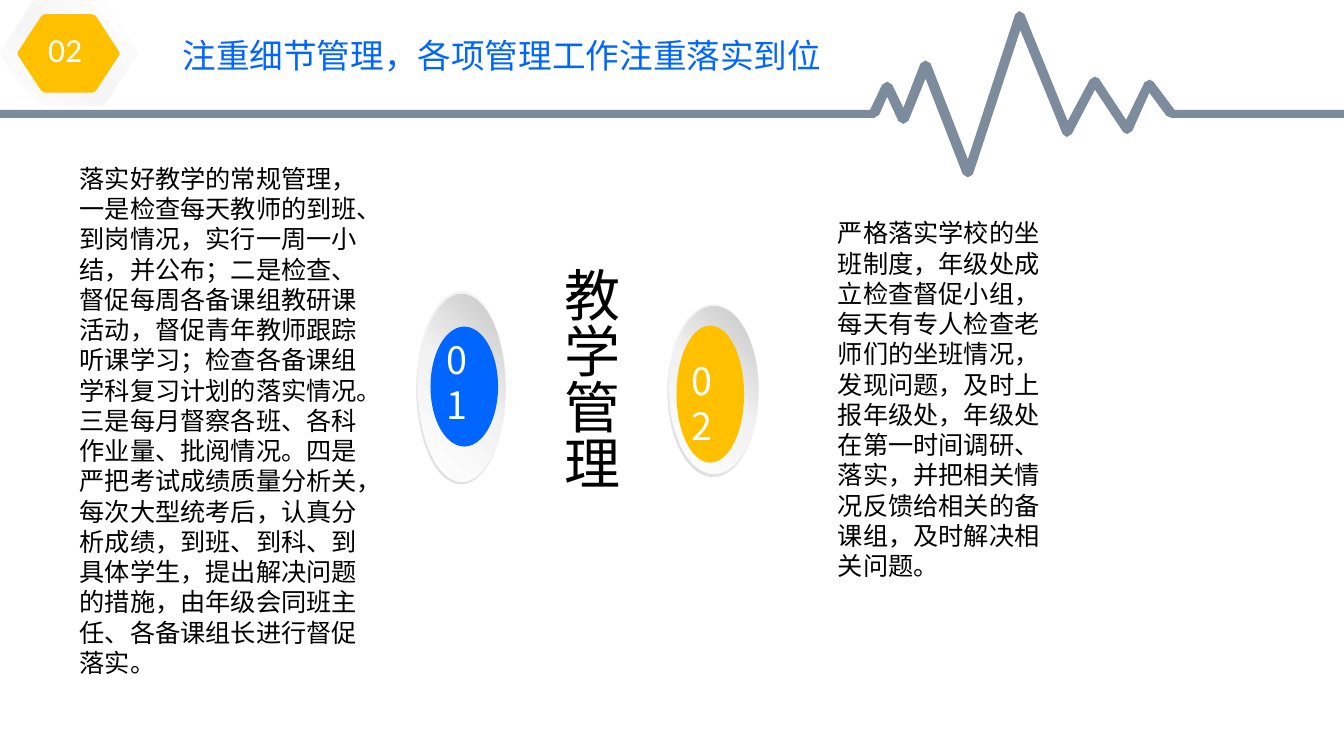
from dataclasses import dataclass

from lxml import etree
from pptx import Presentation
from pptx.dml.color import RGBColor
from pptx.enum import shapes, text
from pptx.oxml.ns import qn
from pptx.util import Inches, Pt


@dataclass(frozen=True)
class Theme:
    blue: str = "0066FF"
    amber: str = "FFC000"
    slate: str = "7C8C9C"
    white: str = "FFFFFF"
    black: str = "000000"
    cjk: str = "Noto Sans CJK SC"
    latin: str = "Calibri"
    body: float = 18
    heading: float = 24
    number: float = 26.9
    centre: float = 40
    rim: tuple = ((0, "F2F2F2"), (55, "F2F2F2"), (100, "D9D9D9"))
    dome: tuple = ((0, "FFFFFF"), (51, "F2F2F2"), (100, "C5C5C5"))
    badge: tuple = ((0, "FFFFFF"), (47, "F5F5F5"), (100, "FFFFFF"))


THEME = Theme()
TITLE = "注重细节管理，各项管理工作注重落实到位"
SECTION = "02"
CENTRE = "教学管理"

# Text and its box: left, top, width, height
BODIES = [
    ("严格落实学校的坐班制度，年级处成立检查督促小组，每天有专人检查老师们的坐班情况，"
     "发现问题，及时上报年级处，年级处在第一时间调研、落实，并把相关情况反馈给相关的备课组，"
     "及时解决相关问题。", (8.22, 2.12, 2.36, 3.72)),
    ("落实好教学的常规管理，一是检查每天教师的到班、到岗情况，实行一周一小结，并公布；"
     "二是检查、督促每周各备课组教研课活动，督促青年教师跟踪听课学习；"
     "检查各备课组学科复习计划的落实情况。三是每月督察各班、各科作业量、批阅情况。"
     "四是严把考试成绩质量分析关，每次大型统考后，认真分析成绩，到班、到科、到具体学生，"
     "提出解决问题的措施，由年级会同班主任、各备课组长进行督促落实。", (0.7, 1.58, 3.05, 5.24)),
]

# Number, colour, then boxes of the rim, dome, coloured centre and label
BUTTONS = [
    ("01", THEME.blue, (4.13, 2.89, 0.89, 1.91), (4.15, 2.92, 0.86, 1.86),
     (4.27, 3.24, 0.67, 1.19), (4.3, 3.27, 0.67, 1.04)),
    ("02", THEME.amber, (6.62, 3.02, 0.91, 1.71), (6.64, 3.04, 0.88, 1.66),
     (6.71, 3.23, 0.67, 1.36), (6.73, 3.48, 0.67, 1.04)),
]

PULSE_TOP = [
    (-0.1, 1.09), (8.63, 1.09), (8.75, 0.84), (8.8, 0.81), (8.85, 0.84), (8.96, 1.07),
    (9.13, 0.63), (9.18, 0.6), (9.23, 0.63), (9.6, 1.58), (10.07, 0.14), (10.11, 0.11),
    (10.16, 0.14), (10.59, 1.2), (10.81, 0.79), (10.86, 0.76), (10.9, 0.78), (11.17, 1.19),
    (11.35, 0.82), (11.4, 0.79), (11.44, 0.81), (11.65, 1.09), (13.43, 1.09)]
PULSE_BOTTOM = [
    (13.43, 1.17), (11.62, 1.17), (11.57, 1.15), (11.4, 0.92), (11.23, 1.3), (11.18, 1.33),
    (11.14, 1.31), (10.86, 0.89), (10.63, 1.33), (10.58, 1.36), (10.54, 1.33), (10.12, 0.3),
    (9.65, 1.73), (9.6, 1.76), (9.55, 1.73), (9.18, 0.78), (9.01, 1.2), (8.96, 1.23),
    (8.91, 1.2), (8.8, 0.96), (8.72, 1.14), (8.67, 1.17), (-0.1, 1.17)]

HEXAGON_CENTRE = (0.68, 0.53)
HEXAGONS = [((1.37, 1.06), THEME.white), ((1.35, 1.04), THEME.badge), ((1.01, 0.78), THEME.amber)]
# One quarter of a hexagon with softened corners, as shares of its half size
HEXAGON_QUARTER = [(1, 0), (0.99, 0.05), (0.54, 0.94), (0.5, 0.98), (0.45, 1)]


def paint(shape, fill, angle=0):
    """Fill with one colour or with (percent, colour) stops, without outline or shadow."""
    shape.shadow.inherit = False
    shape.line.fill.background()
    if isinstance(fill, str):
        shape.fill.solid()
        shape.fill.fore_color.rgb = RGBColor.from_string(fill)
        return
    shape.fill.gradient()
    shape.fill.gradient_angle = 360 - angle
    stops = shape._element.spPr.find(qn("a:gradFill")).find(qn("a:gsLst"))
    for stop in list(stops):
        stops.remove(stop)
    for percent, color in fill:
        stop = etree.SubElement(stops, qn("a:gs"), pos=str(percent * 1000))
        etree.SubElement(stop, qn("a:srgbClr"), val=color)


def add_preset(slide, kind, box, fill, angle=0):
    shape = slide.shapes.add_shape(kind, *map(Inches, box))
    paint(shape, fill, angle)
    return shape


def add_outline(slide, points, fill, angle=0):
    units = [(round(x * 1000), round(y * 1000)) for x, y in points]
    builder = slide.shapes.build_freeform(*units[0], scale=Inches(1) / 1000)
    builder.add_line_segments(units[1:], close=True)
    paint(builder.convert_to_shape(), fill, angle)


def add_hexagon(slide, size, fill):
    quarter = HEXAGON_QUARTER
    ring = (quarter
            + [(-x, y) for x, y in reversed(quarter)]
            + [(-x, -y) for x, y in quarter[1:]]
            + [(x, -y) for x, y in reversed(quarter[1:])])
    (center_x, center_y), (width, height) = HEXAGON_CENTRE, size
    points = [(center_x + x * width / 2, center_y + y * height / 2) for x, y in ring]
    add_outline(slide, points, fill, 315)


def write(shape, words, size, color, font=THEME.cjk, insets=(0.1, 0.05)):
    frame = shape.text_frame
    frame.word_wrap = True
    frame.auto_size = text.MSO_AUTO_SIZE.NONE
    frame.vertical_anchor = text.MSO_ANCHOR.TOP
    frame.margin_left = frame.margin_right = Inches(insets[0])
    frame.margin_top = frame.margin_bottom = Inches(insets[1])
    paragraph = frame.paragraphs[0]
    paragraph.alignment = text.PP_ALIGN.LEFT
    paragraph.line_spacing = Pt(round(size * 1.2, 1))
    run = paragraph.add_run()
    run.text = words
    run.font.size = Pt(size)
    run.font.name = font
    run.font.color.rgb = RGBColor.from_string(color)
    etree.SubElement(run.font._element, qn("a:ea"), typeface=font)
    return paragraph


def add_text(slide, box, *args, **options):
    shape = slide.shapes.add_textbox(*map(Inches, box))
    write(shape, *args, **options)
    return shape


def add_title(slide):
    title = slide.shapes.title
    title.left, title.top, title.width, title.height = map(Inches, (1.31, 0.3, 7.06, 0.5))
    paragraph = write(title, TITLE, THEME.heading, THEME.blue)
    paragraph._p.get_or_add_pPr().set("indent", str(Inches(0.4)))


def add_button(slide, number, color, rim, dome, center, label):
    ring = add_preset(slide, shapes.MSO_SHAPE.DONUT, rim, THEME.rim, 135)
    ring.adjustments[0] = 0.05
    add_preset(slide, shapes.MSO_SHAPE.OVAL, dome, THEME.dome, 315)
    add_preset(slide, shapes.MSO_SHAPE.OVAL, center, color)
    add_text(slide, label, number, THEME.number, THEME.white, insets=(0.13, 0.07))


def main():
    presentation = Presentation()
    presentation.slide_width, presentation.slide_height = Inches(13.33), Inches(7.5)
    slide = presentation.slides.add_slide(presentation.slide_layouts[5])
    add_title(slide)
    add_outline(slide, PULSE_TOP + PULSE_BOTTOM, THEME.slate)
    for button in BUTTONS:
        add_button(slide, *button)
    for words, box in BODIES:
        add_text(slide, box, words, THEME.body, THEME.black, insets=(0.09, 0.04))
    centre = add_text(slide, (5.36, 2.55, 0.88, 3.57), CENTRE, THEME.centre, THEME.black)
    centre.text_frame._txBody.bodyPr.set("vert", "eaVert")
    for size, fill in HEXAGONS:
        add_hexagon(slide, size, fill)
    add_text(slide, (0.38, 0.24, 0.72, 0.5), SECTION, THEME.heading, THEME.white, THEME.latin)
    presentation.save("out.pptx")


if __name__ == "__main__":
    main()
